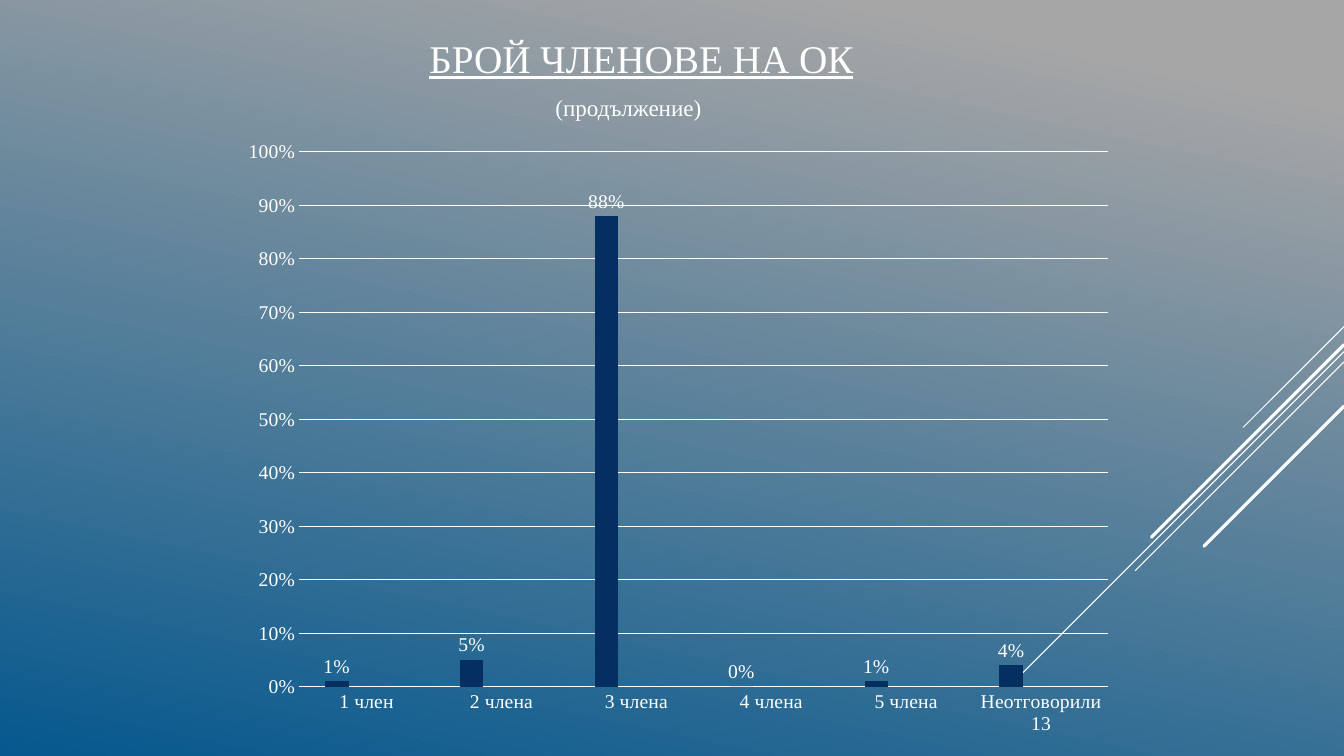
from dataclasses import dataclass

from lxml import etree
from pptx import Presentation
from pptx.chart.data import CategoryChartData
from pptx.dml.color import RGBColor
from pptx.enum.chart import XL_CHART_TYPE, XL_LABEL_POSITION, XL_TICK_MARK
from pptx.enum.shapes import MSO_CONNECTOR
from pptx.enum.text import MSO_ANCHOR, MSO_AUTO_SIZE, PP_ALIGN
from pptx.oxml import parse_xml
from pptx.oxml.ns import nsdecls, qn
from pptx.util import Inches, Pt

COLUMN = XL_CHART_TYPE.COLUMN_CLUSTERED
OUTSIDE_END = XL_LABEL_POSITION.OUTSIDE_END
NO_TICK = XL_TICK_MARK.NONE
STRAIGHT = MSO_CONNECTOR.STRAIGHT
MIDDLE = MSO_ANCHOR.MIDDLE
LEFT = PP_ALIGN.LEFT
NO_FIT = MSO_AUTO_SIZE.NONE


@dataclass(frozen=True)
class Theme:
    text: str = "FFFFFF"
    bg_top: str = "A6A6A6"
    bg_bottom: str = "06588E"
    series: tuple = ("052F61", "A50E82", "14967C")
    font: str = "Times New Roman"
    chart_font: str = "Quicksand"
    title: float = 28
    subtitle: float = 16.5
    label: float = 14
    small: float = 10
    thin: float = 0.75
    thick: float = 2.25


def rgb(value):
    return RGBColor.from_string(value)


def style_font(font, size, color, name, underline=None):
    font.size, font.name, font.underline = Pt(size), name, underline
    font.color.rgb = rgb(color)


def write(sp, text, **fmt):
    tf = sp.text_frame
    tf.word_wrap, tf.auto_size, tf.vertical_anchor = True, NO_FIT, MIDDLE
    p = tf.paragraphs[0]
    p.alignment, p.space_before = LEFT, Pt(0)
    r = p.add_run()
    r.text = text
    style_font(r.font, **fmt)
    return p


class SlideBuilder:
    """Places elements by percentages of the slide's width and height."""

    def __init__(self, prs, theme):
        self.theme = theme
        self.w, self.h = prs.slide_width, prs.slide_height
        self.slide = prs.slides.add_slide(prs.slide_layouts[1])

    def box(self, x, y, w, h):
        return [int(size * share / 100) for size, share in
                ((self.w, x), (self.h, y), (self.w, w), (self.h, h))]

    def background(self, angle):
        fill = self.slide.background.fill
        fill.gradient()
        fill.gradient_angle = 360 - angle
        stops = ((0.1, self.theme.bg_top), (1, self.theme.bg_bottom))
        for stop, (position, color) in zip(fill.gradient_stops, stops):
            stop.position, stop.color.rgb = position, rgb(color)

    def placeholder(self, idx, text, box, size, underline=None):
        sp = self.slide.placeholders[idx]
        sp.left, sp.top, sp.width, sp.height = self.box(*box)
        p = write(sp, text, size=size, color=self.theme.text,
                  name=self.theme.font, underline=underline)
        pPr = p._p.get_or_add_pPr()
        pPr.set("marL", "0")
        pPr.set("indent", "0")
        etree.SubElement(pPr, qn("a:buNone"))

    def ray(self, y, run, weight):
        """A 45-degree line from the right edge; run is a share of the height."""
        _, top, _, length = self.box(0, y, 0, run)
        line = self.slide.shapes.add_connector(
            STRAIGHT, self.w, top, self.w - length, top + length)
        line.line.color.rgb = rgb(self.theme.text)
        line.line.width = Pt(weight)
        spPr = line._element.spPr
        spPr.find(qn("a:ln")).set("cap", "rnd")
        etree.SubElement(spPr, qn("a:effectLst"))

    def axis(self, axis):
        t = self.theme
        axis.major_tick_mark = axis.minor_tick_mark = NO_TICK
        style_font(axis.tick_labels.font, t.label, t.text, t.font)

    def hairline(self, line):
        line.color.rgb, line.width = rgb(self.theme.text), Pt(self.theme.thin)

    def column_chart(self, categories, series, box, plot_area):
        t = self.theme
        data = CategoryChartData(number_format="0%")
        data.categories = categories
        for name, values in series.items():
            data.add_series(name, values)
        chart = self.slide.shapes.add_chart(COLUMN, *self.box(*box), data).chart
        chart.has_legend = chart.has_title = False
        style_font(chart.font, t.small, t.text, t.chart_font)

        # Axes
        cat, val = chart.category_axis, chart.value_axis
        self.axis(cat)
        self.axis(val)
        self.hairline(cat.format.line)
        self.hairline(val.major_gridlines.format.line)
        val.format.line.fill.background()
        val.minimum_scale, val.maximum_scale, val.major_unit = 0, 1, 0.1
        val.tick_labels.number_format = "0%"
        val.tick_labels.number_format_is_linked = False

        # Columns and their labels
        plot = chart.plots[0]
        plot.gap_width, plot.overlap, plot.vary_by_categories = 219, -27, False
        for ser, color in zip(plot.series, t.series):
            ser.format.fill.solid()
            ser.format.fill.fore_color.rgb = rgb(color)
            labels = ser.data_labels
            labels.show_value, labels.position = True, OUTSIDE_END
            labels.number_format, labels.number_format_is_linked = "0%", False
            style_font(labels.font, t.label, t.text, t.font)

        # Inner plot area
        area = chart._chartSpace.chart.plotArea
        for old in area.findall(qn("c:layout")):
            area.remove(old)
        sizes = "".join(f'<c:{tag} val="{share / 100:.3f}"/>'
                        for tag, share in zip("xywh", plot_area))
        area.insert(0, parse_xml(
            f'<c:layout {nsdecls("c")}><c:manualLayout>'
            '<c:layoutTarget val="inner"/><c:xMode val="edge"/>'
            f'<c:yMode val="edge"/>{sizes}</c:manualLayout></c:layout>'))


def main():
    prs = Presentation()
    prs.slide_width, prs.slide_height = Inches(13.33), Inches(7.5)
    theme = Theme()
    s = SlideBuilder(prs, theme)
    s.background(angle=102)

    # Diagonal rays at the right edge
    for y, run, weight in ((43.2, 13.33, theme.thin), (46.53, 43.47, theme.thin),
                           (47.87, 27.6, theme.thin), (45.6, 25.47, theme.thick),
                           (53.73, 18.53, theme.thick)):
        s.ray(y, run, weight)

    # Headings
    s.placeholder(0, "БРОЙ ЧЛЕНОВЕ НА ОК", (31.2, 3.6, 45, 8),
                  theme.title, underline=True)
    s.placeholder(1, "(продължение)", (40.58, 11.55, 34.4, 5.4), theme.subtitle)

    # Share of answers by number of members
    categories = ("1 член", "2 члена", "3 члена", "4 члена", "5 члена",
                  "Неотговорили 13")
    empty = (None,) * len(categories)
    s.column_chart(categories,
                   {"Series 1": (0.01, 0.05, 0.88, 0, 0.01, 0.04),
                    "Series 2": empty, "Series 3": empty},
                   box=(16.73, 18.13, 66.69, 79.07),
                   plot_area=(8.3, 2.5, 90.3, 89.8))
    prs.save("out.pptx")


if __name__ == "__main__":
    main()
